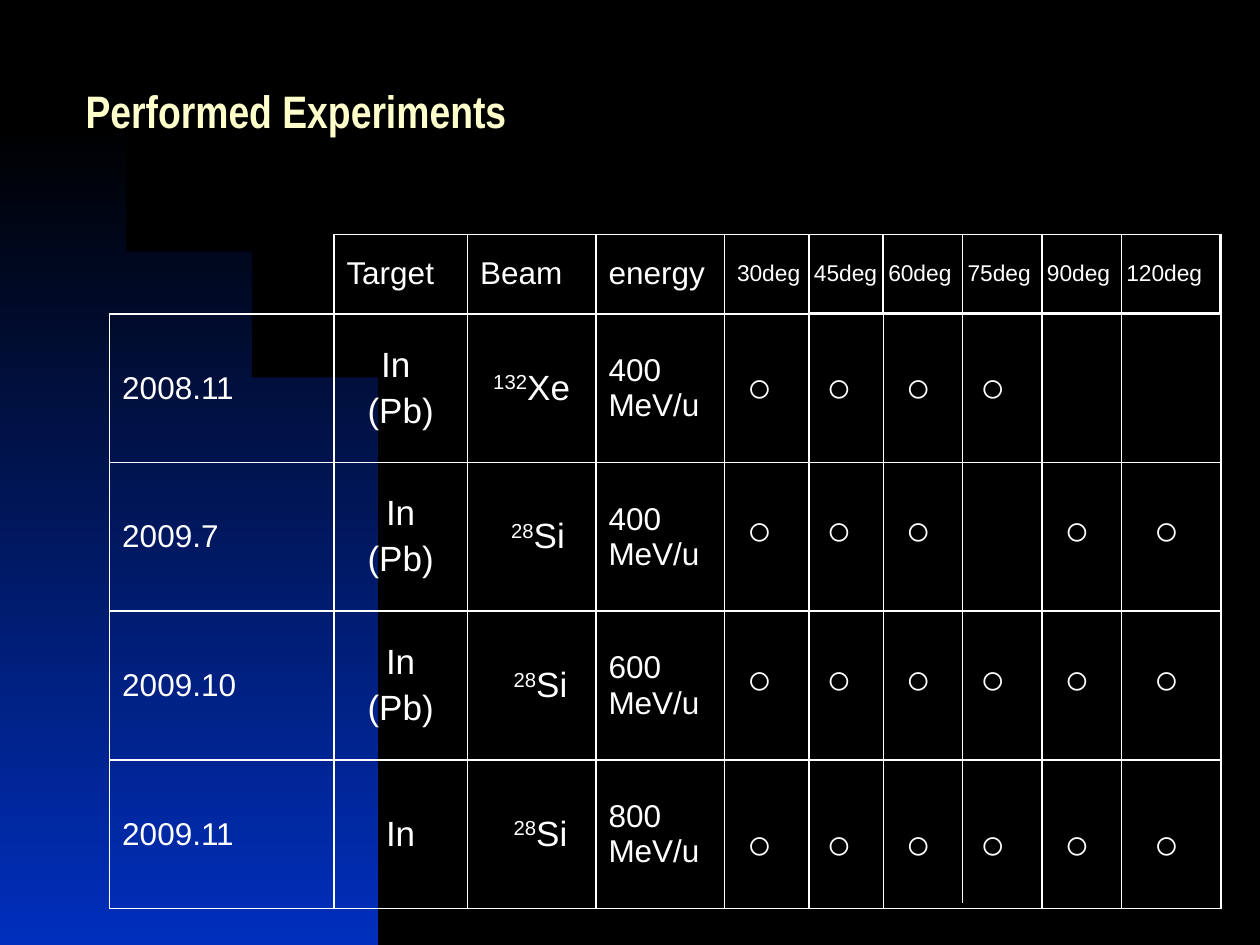
from itertools import accumulate
from lxml import etree
from pptx import Presentation
from pptx.dml.color import RGBColor
from pptx.enum.shapes import MSO_CONNECTOR as CONN
from pptx.enum.text import MSO_ANCHOR as ANCHOR, PP_ALIGN as ALIGN
from pptx.oxml.ns import qn
from pptx.util import Inches, Pt

WHITE, CREAM, BLACK, BLUE = "FFFFFF", "FFFFCC", "000000", "0033CC"
W, H = 10, 7.5

# Grid: date, target, beam and energy columns, then one column per angle.
LEFT, HEAD_TOP, BODY_TOP = 0.87, 1.86, 2.49
ROW_H, HEAD_H = 1.18, 0.63
INFO_COLS = [1.78, 1.06, 1.02, 1.02]
ANGLES_W = 3.94
ANGLE_COLS = [0.59, 0.63, 0.63, 0.63, 0.78]
ANGLES_LEFT = 6.42
ANGLES = ["45deg", "60deg", "75deg", "90deg", "120deg"]

# Date, target lines, beam mass, beam element, beam left margin, energy
RUNS = [
    ("2008.11", ["In ", "(Pb)"], "132", "Xe", 0.1, "400 MeV/u"),
    ("2009.7", ["In", "(Pb)"], "28", "Si", 0.2, "400 MeV/u"),
    ("2009.10", ["In", "(Pb)"], "28", "Si", 0.24, "600 MeV/u"),
    ("2009.11", ["In"], "28", "Si", 0.24, "800 MeV/u"),
]
MARK_X = [5.83, 6.46, 7.09, 7.68, 8.35, 9.06]
MARK_ROWS = [(2.81, "○○○○--"), (3.95, "○○○-○○"), (5.13, "○○○○○○"), (6.44, "○○○○○○")]


def rgb(hex_color):
    return RGBColor.from_string(hex_color)


def add_run(p, text, size, color=WHITE, font="Arial", bold=False, raised=False):
    r = p.add_run()
    r.text = text
    f = r.font
    f.size, f.name, f.bold = Pt(size), font, bold
    f.color.rgb = rgb(color)
    if raised:
        r._r.get_or_add_rPr().set("baseline", "30000")


def add_text(s, x, y, w, h, text, size, wrap=True, **style):
    tf = s.shapes.add_textbox(Inches(x), Inches(y), Inches(w), Inches(h)).text_frame
    tf.word_wrap = wrap
    add_run(tf.paragraphs[0], text, size, **style)
    return tf


def add_swoosh(s):
    """Gradient quarter-oval, its curve sampled from one cubic Bezier."""
    top, right, steps = 0.92, 3.17, 60
    curve = []
    for i in range(steps + 1):
        t = i / steps
        u = 1 - t
        x = 3 * u * u * t * 1.75 + 3 * u * t * t * right + t ** 3 * right
        y = (u ** 3 + 3 * u * u * t) * top + 3 * u * t * t * 3.87 + t ** 3 * H
        curve.append((x, y))
    fb = s.shapes.build_freeform(*curve[0], scale=Inches(1))
    fb.add_line_segments(curve[1:] + [(0, H)], close=True)
    sp = fb.convert_to_shape()
    sp.shadow.inherit = False
    sp.line.fill.background()
    sp.fill.gradient()
    sp.fill.gradient_angle = 270
    for stop, color in zip(sp.fill.gradient_stops, (BLACK, BLUE)):
        stop.color.rgb = rgb(color)


def set_borders(cell):
    tc_pr = cell._tc.get_or_add_tcPr()
    for i, side in enumerate(("lnL", "lnR", "lnT", "lnB")):
        ln = etree.Element(qn("a:" + side), w=str(Pt(1)))
        fill = etree.SubElement(ln, qn("a:solidFill"))
        etree.SubElement(fill, qn("a:srgbClr"), val=WHITE)
        tc_pr.insert(i, ln)


def add_grid(s, x, y, cols, rows, margin=0.1):
    """Unfilled table with white borders."""
    frame = s.shapes.add_table(len(rows), len(cols), Inches(x), Inches(y),
                               Inches(sum(cols)), Inches(sum(rows)))
    table = frame.table
    table.first_row = table.horz_banding = False
    for col, width in zip(table.columns, cols):
        col.width = Inches(width)
    for row, height in zip(table.rows, rows):
        row.height = Inches(height)
    for cell in table.iter_cells():
        cell.fill.background()
        cell.vertical_anchor = ANCHOR.MIDDLE
        cell.margin_left = cell.margin_right = Inches(margin)
        set_borders(cell)
    return table


def fill_cell(cell, lines, size, align=ALIGN.LEFT):
    tf = cell.text_frame
    for i, line in enumerate(lines):
        p = tf.add_paragraph() if i else tf.paragraphs[0]
        p.alignment = align
        if i:
            p.space_before = Pt(0.2 * size)
        add_run(p, line, size)


def add_body(s):
    table = add_grid(s, LEFT, BODY_TOP, INFO_COLS + [ANGLES_W], [ROW_H] * len(RUNS))
    for i, (date, target, mass, element, margin, energy) in enumerate(RUNS):
        fill_cell(table.cell(i, 0), [date], 18)
        fill_cell(table.cell(i, 1), target, 20, ALIGN.CENTER)
        beam = table.cell(i, 2)
        beam.margin_left = Inches(margin)
        p = beam.text_frame.paragraphs[0]
        p.alignment = ALIGN.CENTER
        add_run(p, mass, 20, raised=True)
        add_run(p, element, 20)
        fill_cell(table.cell(i, 3), [energy], 18)


def add_headers(s):
    main_head = add_grid(s, LEFT + INFO_COLS[0], HEAD_TOP,
                         INFO_COLS[1:] + [ANGLES_W], [HEAD_H])
    for i, (label, size) in enumerate([("Target", 18), ("Beam", 18),
                                       ("energy", 18), ("30deg", 13)]):
        fill_cell(main_head.cell(0, i), [label], size)
    angle_head = add_grid(s, ANGLES_LEFT, HEAD_TOP, ANGLE_COLS, [0.62], margin=0.04)
    for i, label in enumerate(ANGLES):
        fill_cell(angle_head.cell(0, i), [label], 13)


def add_angle_lines(s):
    for x in accumulate(ANGLE_COLS[:-1], initial=ANGLES_LEFT):
        top = 2.45 if round(x, 2) == 7.64 else BODY_TOP
        line = s.shapes.add_connector(CONN.STRAIGHT, Inches(x), Inches(top),
                                      Inches(x), Inches(top + 4 * ROW_H))
        line.line.color.rgb = rgb(WHITE)
        line.line.width = Pt(0.75)
        etree.SubElement(line._element.spPr, qn("a:effectLst"))


def add_marks(s):
    for y, marks in MARK_ROWS:
        for x, mark in zip(MARK_X, marks):
            if mark == "○":
                add_text(s, x, y, 0.47, 0.5, mark, 24, wrap=False, bold=True)


def add_title(s):
    tf = add_text(s, 0.5, 0.3, 0.9 * W, 1.25, "Performed Experiments", 26,
                  color=CREAM, font="Arial Narrow", bold=True)
    tf.vertical_anchor = ANCHOR.MIDDLE
    tf.margin_left = Inches(0.18)
    tf.paragraphs[0].line_spacing = 0.7


def main():
    prs = Presentation()
    prs.slide_width, prs.slide_height = Inches(W), Inches(H)
    s = prs.slides.add_slide(prs.slide_layouts[6])
    s.background.fill.solid()
    s.background.fill.fore_color.rgb = rgb(BLACK)
    add_swoosh(s)
    add_title(s)
    add_body(s)
    add_headers(s)
    add_angle_lines(s)
    add_marks(s)
    prs.save("out.pptx")


if __name__ == "__main__":
    main()
